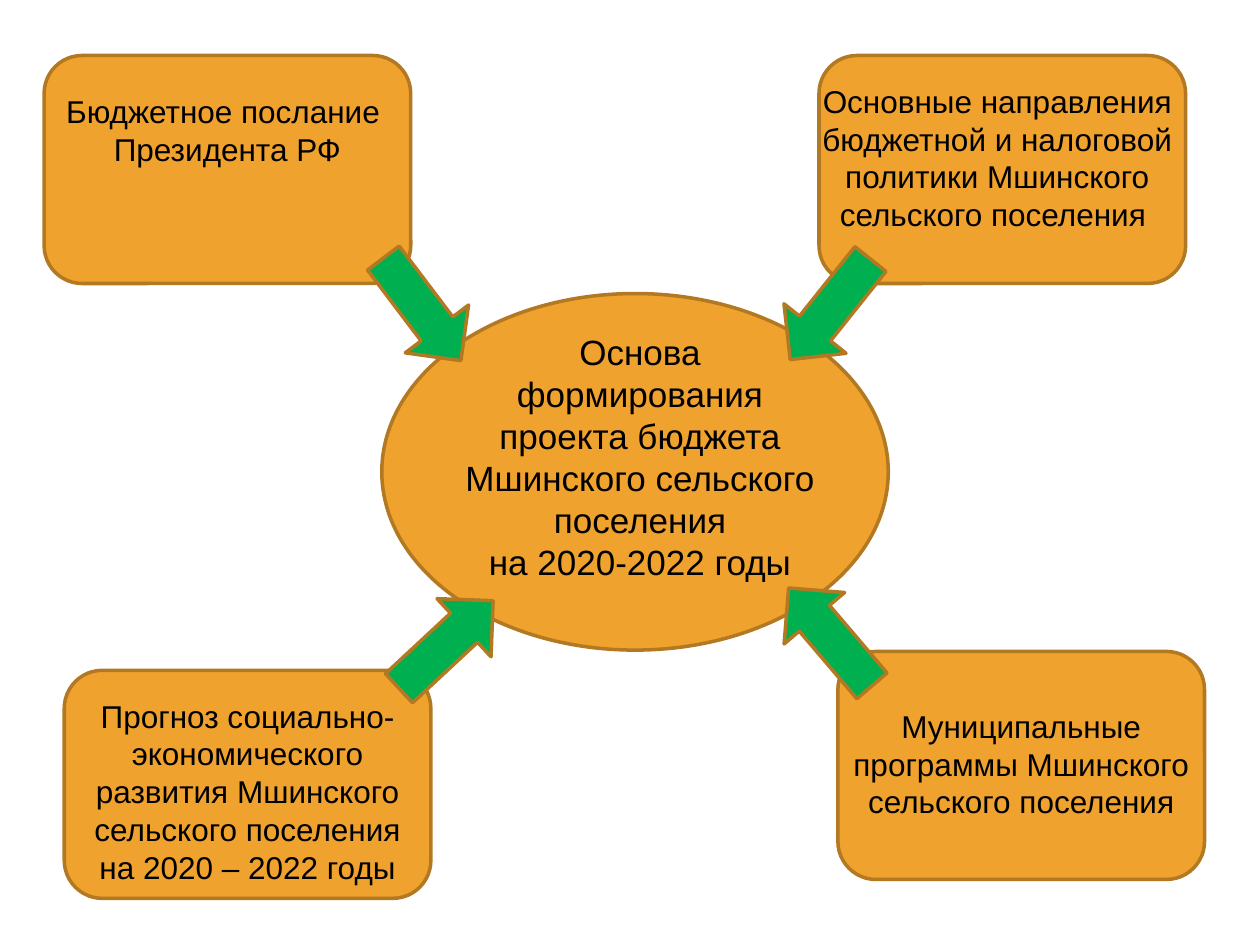
import pptx
import pptx.util
import pptx.dml.color
import pptx.enum.shapes
import pptx.enum.text

Inches = pptx.util.Inches
SHAPE = pptx.enum.shapes.MSO_SHAPE
COLORS = {"box": "F0A22E", "edge": "B27822", "arrow": "00B050", "text": "000000"}

# Content: the centre, then the four sources that feed it
TITLE = ["Основа", "формирования", "проекта бюджета Мшинского сельского",
         "поселения", "на 2020-2022 годы"]
OVAL = (3.03, 2.33, 4.02, 2.83)
TITLE_AT = (3.19, 2.57, 3.78, 2.12)
BOX_SIZE = (2.91, 1.81)
ARROW_SIZE = (1.02, 0.63)

# Each source: box corner, text area, arrow corner, arrow angle, lines
SOURCES = [
    {"box": (0.35, 0.44), "text": (0.35, 0.68, 2.91, 0.71),
     "arrow": (2.84, 2.14), "turn": 52.9,
     "lines": ["Бюджетное послание ", "Президента РФ"]},
    {"box": (6.5, 0.44), "text": (6.42, 0.6, 2.99, 1.62),
     "arrow": (6.08, 2.14), "turn": 128.6,
     "lines": ["Основные направления бюджетной и налоговой политики "
               "Мшинского сельского поселения "]},
    {"box": (0.51, 5.32), "text": (0.51, 5.48, 2.91, 1.62),
     "arrow": (3.03, 4.8), "turn": 317.1,
     "lines": ["Прогноз социально-экономического развития Мшинского",
               "сельского поселения на 2020 – 2022 годы"]},
    {"box": (6.65, 5.17), "text": (6.65, 5.56, 2.91, 1.01),
     "arrow": (6.08, 4.74), "turn": 229.6,
     "lines": ["Муниципальные программы Мшинского сельского поселения"]},
]


def color(name):
    return pptx.dml.color.RGBColor.from_string(COLORS[name])


def add_form(slide, kind, area, fill, turn=0):
    form = slide.shapes.add_shape(kind, *map(Inches, area))
    form.shadow.inherit = False
    form.fill.solid()
    form.fill.fore_color.rgb = color(fill)
    form.line.color.rgb = color("edge")
    form.line.width = pptx.util.Pt(2)
    form.rotation = turn


def write(holder, area, lines, size):
    holder.left, holder.top, holder.width, holder.height = map(Inches, area)
    frame = holder.text_frame
    frame.text = "\n".join(lines)
    frame.word_wrap = True
    frame.auto_size = pptx.enum.text.MSO_AUTO_SIZE.SHAPE_TO_FIT_TEXT
    frame.vertical_anchor = pptx.enum.text.MSO_ANCHOR.TOP
    for para in frame.paragraphs:
        para.alignment = pptx.enum.text.PP_ALIGN.CENTER
        para.font.name = "Arial"
        para.font.size = pptx.util.Pt(size)
        para.font.color.rgb = color("text")


def main():
    deck = pptx.Presentation()
    deck.slide_width, deck.slide_height = Inches(10), Inches(7.5)
    slide = deck.slides.add_slide(deck.slide_layouts[5])

    # Oval and boxes
    add_form(slide, SHAPE.OVAL, OVAL, "box")
    for source in SOURCES:
        add_form(slide, SHAPE.ROUNDED_RECTANGLE, source["box"] + BOX_SIZE, "box")

    # Title, brought in front of the oval
    title = slide.shapes.title
    write(title, TITLE_AT, TITLE, 20)
    slide.shapes.element.append(title.element)

    # Box texts
    for source in SOURCES:
        label = slide.shapes.add_textbox(0, 0, 0, 0)
        write(label, source["text"], source["lines"], 18)

    # Arrows towards the oval
    for source in SOURCES:
        add_form(slide, SHAPE.RIGHT_ARROW, source["arrow"] + ARROW_SIZE,
                 "arrow", source["turn"])

    deck.save("out.pptx")


if __name__ == "__main__":
    main()
